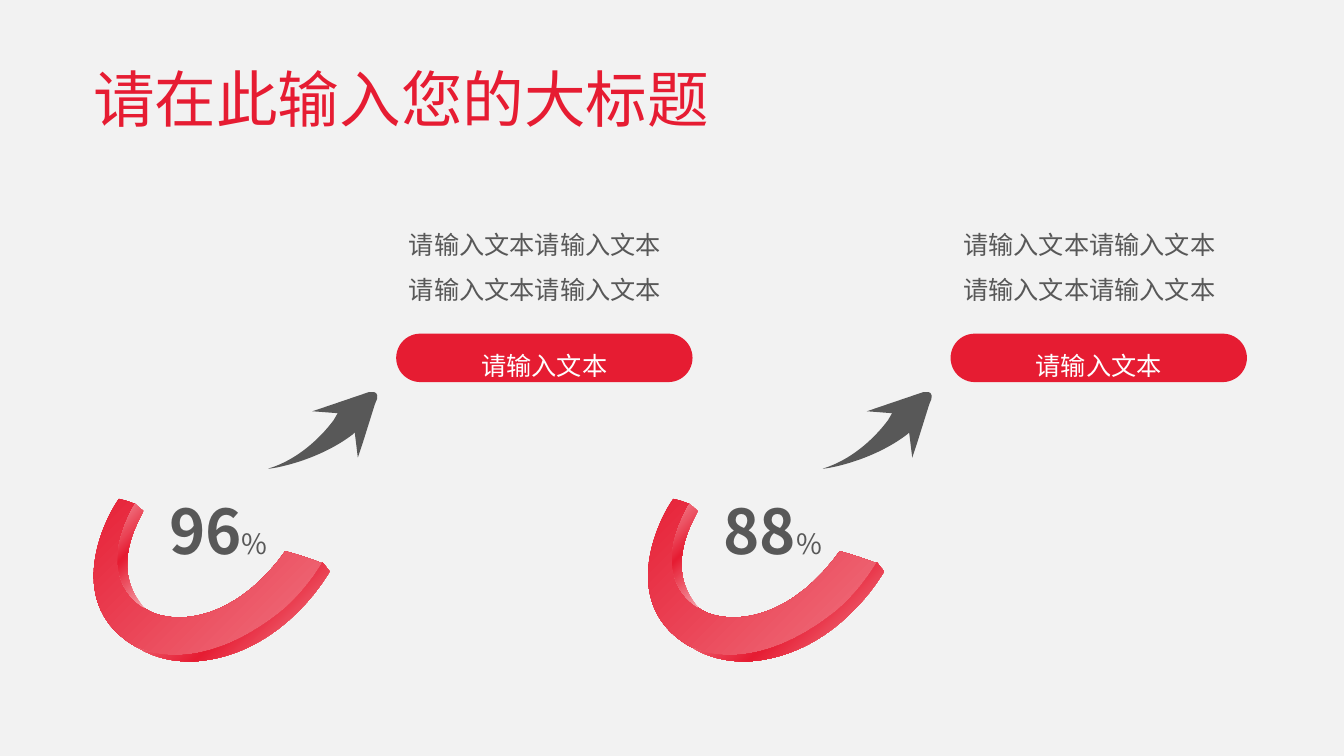
from lxml import etree
from pptx import Presentation
from pptx import util as u
from pptx.dml.color import RGBColor
from pptx.enum import shapes, text
from pptx.oxml import ns

FONT = "Noto Sans CJK SC"
COLORS = {
    "background": "F2F2F2",
    "red": "E61C32",
    "light_red": "F07784",
    "pink": "F5A4AD",
    "gray": "585858",
    "white": "FEFFFF",
}
FACE = [(0, "red"), (100, "light_red")]
EDGE = [(0, "pink"), (50, "red"), (100, "pink")]
SLIDE_SIZE = (960, 540)
COLUMN_STEP = 396
COLUMNS = ["96", "88"]

RING_FACE = [
    (96.5, 360),
    (88.6, 373.7, 67.7, 418.3, 109.4, 437.8),
    (131.8, 446.4, 170.6, 439.9, 203.8, 393.8),
    (210.2, 395.3, 223.2, 399.6, 230.4, 402.5),
    (201.6, 454.3, 129.6, 484.3, 92.9, 459.4),
    (46.1, 428.4, 74.9, 370.1, 85, 356.4),
    (90.7, 357.8, 88.6, 357.1, 96.5, 360),
]
RING_OUTER_EDGE = [
    (99.4, 463),
    (99.4, 463, 140.4, 485.3, 201.6, 436.3),
    (219.6, 421.2, 230.4, 401.8, 230.4, 401.8),
    (235.4, 408.2, 235.4, 408.2, 235.4, 408.2),
    (235.4, 408.2, 203, 467.3, 140.4, 472.3),
    (114.5, 473.8, 99.4, 463, 99.4, 463),
]
RING_INNER_EDGE = [
    (96.5, 360),
    (96.5, 360, 101.5, 364.3, 102.2, 365),
    (103, 366.5, 75.6, 403.9, 103, 434.2),
    (82.8, 421.2, 84.2, 402.5, 84.2, 397.4),
    (84.2, 380.2, 96.5, 360, 96.5, 360),
]
ARROW = [
    (265.7, 280.1),
    (267.1, 280.1, 267.8, 280.1, 268.6, 280.8),
    (268.6, 280.8, 268.6, 280.8, 268.6, 280.8),
    (269.3, 281.5, 270, 283, 269.3, 285.1),
    (267.8, 288.7),
    (259.2, 316.1),
    (259.2, 316.1),
    (255.6, 326.9),
    (253.4, 308.9),
    (252, 310.3),
    (227.5, 329, 195.8, 334.8, 191.5, 334.8),
    (211, 329, 227.5, 314.6, 238.3, 300.2),
    (241.2, 295.2),
    (223.2, 293.8),
    (263.5, 280.1),
    (264.2, 280.1),
    (265, 280.1, 265.7, 280.1, 265.7, 280.1),
]


def rgb(color):
    return RGBColor.from_string(COLORS[color])


def apply(target, values):
    for name, value in values.items():
        setattr(target, name, value)


def place(shape, left, top, width, height):
    apply(shape, {"left": u.Pt(left), "top": u.Pt(top),
                  "width": u.Pt(width), "height": u.Pt(height)})


def write(shape, runs, color, frame_format, paragraph_format):
    frame = shape.text_frame
    apply(frame, {"word_wrap": True, **frame_format})
    paragraph = frame.paragraphs[0]
    apply(paragraph, paragraph_format)
    for words, size, bold in runs:
        run = paragraph.add_run()
        run.text = words
        apply(run.font, {"name": FONT, "size": u.Pt(size), "bold": bold})
        run.font.color.rgb = rgb(color)
        east_asian = etree.SubElement(run.font._element, ns.qn("a:ea"))
        east_asian.set("typeface", FONT)


def finish(shape, color):
    shape.shadow.inherit = False
    shape.line.fill.background()
    shape.fill.solid()
    shape.fill.fore_color.rgb = rgb(color)


def shade(shape, stops):
    shape.fill.gradient()
    shape.fill.gradient_angle = 315
    stop_list = next(shape._element.iter(ns.qn("a:gsLst")))
    for stop in list(stop_list):
        stop_list.remove(stop)
    for percent, color in stops:
        stop = etree.SubElement(stop_list, ns.qn("a:gs"), pos=str(percent * 1000))
        etree.SubElement(stop, ns.qn("a:srgbClr"), val=COLORS[color])


def bend(shape, segments):
    lines = iter(list(shape._element.iter(ns.qn("a:lnTo"))))
    for segment in segments:
        line = next(lines)
        if len(segment) == 6:
            line.tag = ns.qn("a:cubicBezTo")
            for _ in range(2):
                extra = next(lines)
                line.append(extra[0])
                extra.getparent().remove(extra)


def add_outline(slide, outline, offset, color):
    points = [(u.Pt(segment[i] + offset), u.Pt(segment[i + 1]))
              for segment in outline for i in range(0, len(segment), 2)]
    builder = slide.shapes.build_freeform(*points[0])
    builder.add_line_segments(points[1:], close=True)
    shape = builder.convert_to_shape()
    bend(shape, outline[1:])
    finish(shape, color)
    return shape


def add_shape(slide, kind, box, color):
    shape = slide.shapes.add_shape(kind, *map(u.Pt, box))
    finish(shape, color)
    return shape


def add_backdrop(slide):
    backdrop = add_shape(slide, shapes.MSO_SHAPE.RECTANGLE, (0, 0, *SLIDE_SIZE), "background")
    slide.slide_layout.shapes._spTree.insert(2, backdrop._element)


def add_text(slide, box, runs, frame_format, paragraph_format):
    shape = slide.shapes.add_textbox(*map(u.Pt, box))
    write(shape, runs, "gray", frame_format, paragraph_format)


def add_pill(slide, box, words):
    pill = add_shape(slide, shapes.MSO_SHAPE.ROUNDED_RECTANGLE, box, "red")
    pill.adjustments[0] = 0.5
    write(pill, [(words, 18, False)], "white",
          {"vertical_anchor": text.MSO_ANCHOR.MIDDLE},
          {"alignment": text.PP_ALIGN.CENTER, "line_spacing": 1.5})


def add_title(slide, words):
    title = slide.shapes.title
    place(title, 59.3, 13, 850.3, 87.8)
    write(title, [(words, 44, False)], "red",
          {"vertical_anchor": text.MSO_ANCHOR.BOTTOM, "auto_size": text.MSO_AUTO_SIZE.NONE},
          {"alignment": text.PP_ALIGN.LEFT, "line_spacing": 0.9})


def add_column(slide, offset, number):
    for outline, stops in [(RING_FACE, FACE), (RING_OUTER_EDGE, EDGE), (RING_INNER_EDGE, EDGE)]:
        shade(add_outline(slide, outline, offset, "red"), stops)
    add_text(slide, (93.1 + offset, 348.5, 126, 60.5),
             [(number, 44, True), ("%", 20, False)],
             {"auto_size": text.MSO_AUTO_SIZE.SHAPE_TO_FIT_TEXT},
             {"alignment": text.PP_ALIGN.CENTER})
    add_outline(slide, ARROW, offset, "gray")
    add_pill(slide, (283 + offset, 238.3, 211.7, 34.6), "请输入文本")
    add_text(slide, (283 + offset, 145.8, 198, 79.2),
             [("请输入文本请输入文本请输入文本请输入文本", 18, False)],
             {"vertical_anchor": text.MSO_ANCHOR.MIDDLE},
             {"alignment": text.PP_ALIGN.CENTER, "line_spacing": 1.5})


def main():
    presentation = Presentation()
    width, height = map(u.Pt, SLIDE_SIZE)
    apply(presentation, {"slide_width": width, "slide_height": height})
    slide = presentation.slides.add_slide(presentation.slide_layouts[5])
    add_backdrop(slide)
    add_title(slide, "请在此输入您的大标题")
    for index, number in enumerate(COLUMNS):
        add_column(slide, index * COLUMN_STEP, number)
    presentation.save("out.pptx")


if __name__ == "__main__":
    main()
